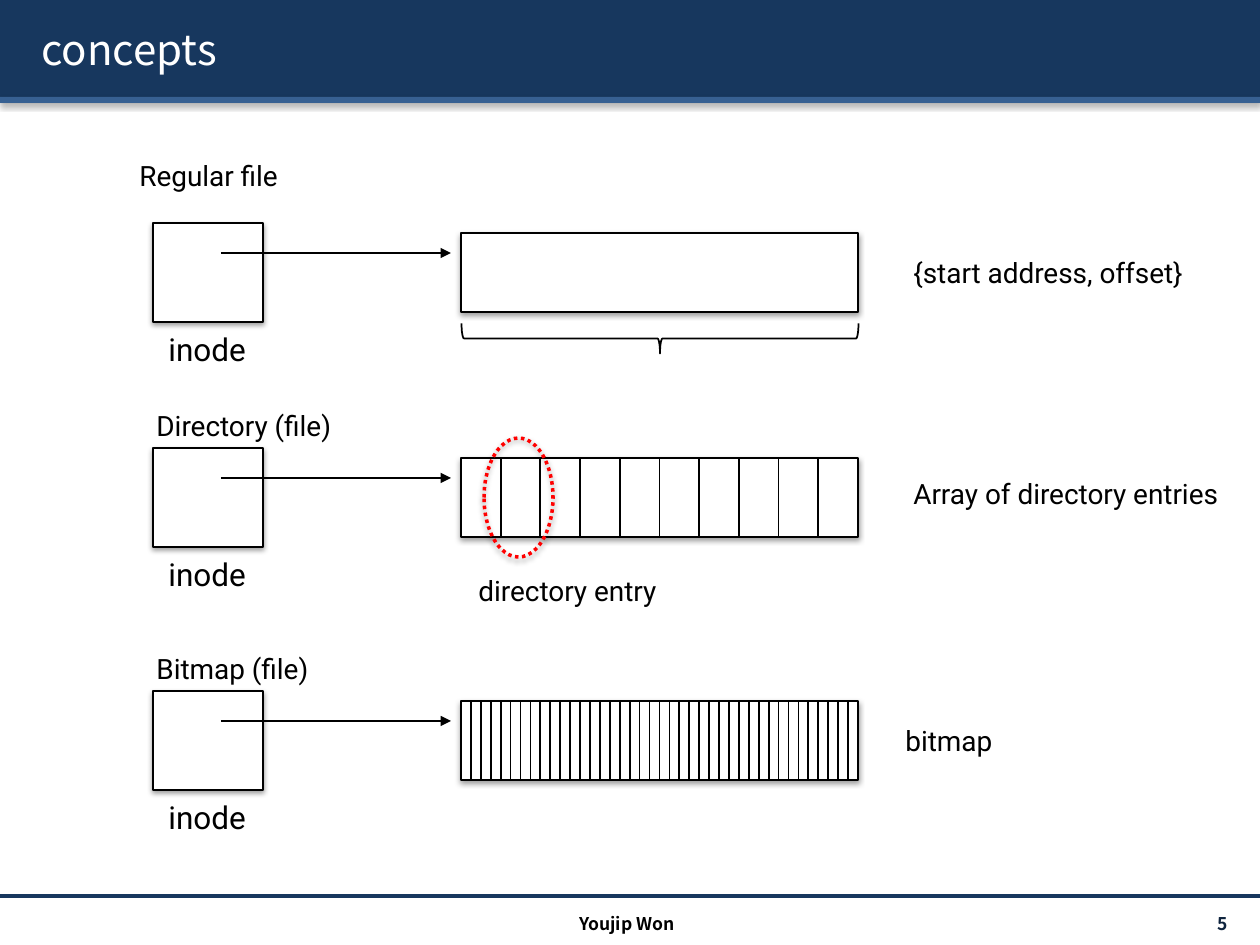
"""Draw how an inode leads to a file, a directory and a bitmap."""

from typing import NamedTuple, Optional

from lxml.etree import SubElement
from pptx import Presentation
from pptx.dml.color import RGBColor
from pptx.enum.dml import MSO_LINE
from pptx.enum.shapes import MSO_CONNECTOR, MSO_SHAPE
from pptx.enum.text import MSO_ANCHOR, PP_ALIGN
from pptx.oxml.ns import qn
from pptx.util import Emu, Pt

SCALE = 914400 / 126
BLACK = RGBColor(0x00, 0x00, 0x00)
WHITE = RGBColor(0xFF, 0xFF, 0xFF)
RED = RGBColor(0xFF, 0x00, 0x00)
NAVY = RGBColor(0x17, 0x37, 0x5E)
BLUE = RGBColor(0x37, 0x60, 0x92)
INK = RGBColor(0x0F, 0x24, 0x3E)
BODY = "Roboto"
HEAD = "Noto Sans CJK KR"
BAR_X, BAR_W, BAR_H = 461, 397, 79


class Box(NamedTuple):
    x: int
    y: int
    w: int
    h: int


class Row(NamedTuple):
    title: str
    title_x: int
    title_y: int
    top: int
    cells: int
    note: str
    note_x: int
    note_y: int


ROWS = [
    Row("Regular file", 127, 152, 233, 1, "{start address, offset}", 901, 249),
    Row("Directory (file)", 144, 402, 458, 10, "Array of directory entries", 901, 470),
    Row("Bitmap (file)", 144, 645, 701, 40, "bitmap", 893, 717),
]


def px(value: float) -> Emu:
    return Emu(round(value * SCALE))


def shade(effects, blur: int, dist: int, angle: int, alpha: int) -> None:
    outer = SubElement(effects, qn("a:outerShdw"), blurRad=str(blur),
                       dist=str(dist), dir=str(angle * 60000), rotWithShape="0")
    color = SubElement(outer, qn("a:srgbClr"), val=str(BLACK))
    SubElement(color, qn("a:alpha"), val=str(alpha * 1000))


def draw(slide, kind: MSO_SHAPE, box: Box, fill: Optional[RGBColor] = None,
         line: Optional[RGBColor] = None, width: float = 0.75, shadow: bool = True):
    shape = slide.shapes.add_shape(kind, *map(px, box))
    shape.shadow.inherit = False
    if fill is None:
        shape.fill.background()
    else:
        shape.fill.solid()
        shape.fill.fore_color.rgb = fill
    if line is None:
        shape.line.fill.background()
    else:
        shape.line.color.rgb = line
        shape.line.width = Pt(width)
    if shadow:
        shade(shape._element.spPr.find(qn("a:effectLst")), 40000, 20000, 90, 38)
    return shape


def link(slide, x1: float, y1: float, x2: float, y2: float, color: RGBColor = BLACK,
         width: float = 1, arrow: bool = False) -> None:
    line = slide.shapes.add_connector(MSO_CONNECTOR.STRAIGHT, *map(px, (x1, y1, x2, y2)))
    line.line.color.rgb = color
    line.line.width = Pt(width)
    props = line._element.spPr
    if arrow:
        SubElement(props.find(qn("a:ln")), qn("a:tailEnd"), type="triangle")
    SubElement(props, qn("a:effectLst"))


def write(slide, text: str, box: Box, size: int = 16, face: str = BODY,
          color: RGBColor = BLACK, bold: bool = False,
          align: PP_ALIGN = PP_ALIGN.LEFT, anchor: MSO_ANCHOR = MSO_ANCHOR.TOP):
    frame = slide.shapes.add_textbox(*map(px, box)).text_frame
    frame.word_wrap = True
    frame.vertical_anchor = anchor
    para = frame.paragraphs[0]
    para.alignment = align
    run = para.add_run()
    run.text = text
    font = para.font
    font.size, font.name, font.bold = Pt(size), face, bold
    font.color.rgb = color
    return run


def frame_page(slide) -> None:
    draw(slide, MSO_SHAPE.RECTANGLE, Box(0, 0, 1260, 97), NAVY)
    draw(slide, MSO_SHAPE.RECTANGLE, Box(0, 97, 1260, 6), BLUE)
    link(slide, 0, 896, 1260, 896, NAVY, 2)
    title = write(slide, "concepts", Box(29, 8, 1211, 81), 24, HEAD, WHITE,
                  anchor=MSO_ANCHOR.MIDDLE)
    effects = SubElement(title._r.get_or_add_rPr(), qn("a:effectLst"))
    shade(effects, 38100, 38100, 45, 100)
    write(slide, "5 ", Box(1097, 908, 147, 30), 10, HEAD, INK, True,
          PP_ALIGN.RIGHT, MSO_ANCHOR.MIDDLE)
    write(slide, "Youjip Won", Box(418, 907, 418, 30), 10, HEAD, BLACK, True,
          PP_ALIGN.CENTER)


def draw_row(slide, row: Row) -> None:
    top = row.top
    draw(slide, MSO_SHAPE.RECTANGLE, Box(BAR_X, top, BAR_W, BAR_H), WHITE, BLACK)
    draw(slide, MSO_SHAPE.RECTANGLE, Box(153, top - 10, 110, 99), WHITE, BLACK)
    write(slide, "inode", Box(156, top + 91, 128, 50), 18)
    link(slide, 221, top + 20, 451, top + 20, arrow=True)
    write(slide, row.title, Box(row.title_x, row.title_y, 208, 47))
    for i in range(1, row.cells):
        x = BAR_X + i * BAR_W / row.cells
        link(slide, x, top, x, top + BAR_H)
    write(slide, row.note, Box(row.note_x, row.note_y, 340, 47))


def main() -> None:
    deck = Presentation()
    deck.slide_width, deck.slide_height = px(1260), px(945)
    slide = deck.slides.add_slide(deck.slide_layouts[6])
    frame_page(slide)
    for row in ROWS:
        draw_row(slide, row)
    brace = draw(slide, MSO_SHAPE.RIGHT_BRACE, Box(645, 140, 30, BAR_W),
                 line=BLACK, width=1, shadow=False)
    brace.rotation = 90
    ring = draw(slide, MSO_SHAPE.OVAL, Box(484, 438, 69, 119), line=RED, width=2)
    ring.line.dash_style = MSO_LINE.ROUND_DOT
    write(slide, "directory entry", Box(466, 567, 248, 47))
    deck.save("out.pptx")


if __name__ == "__main__":
    main()
